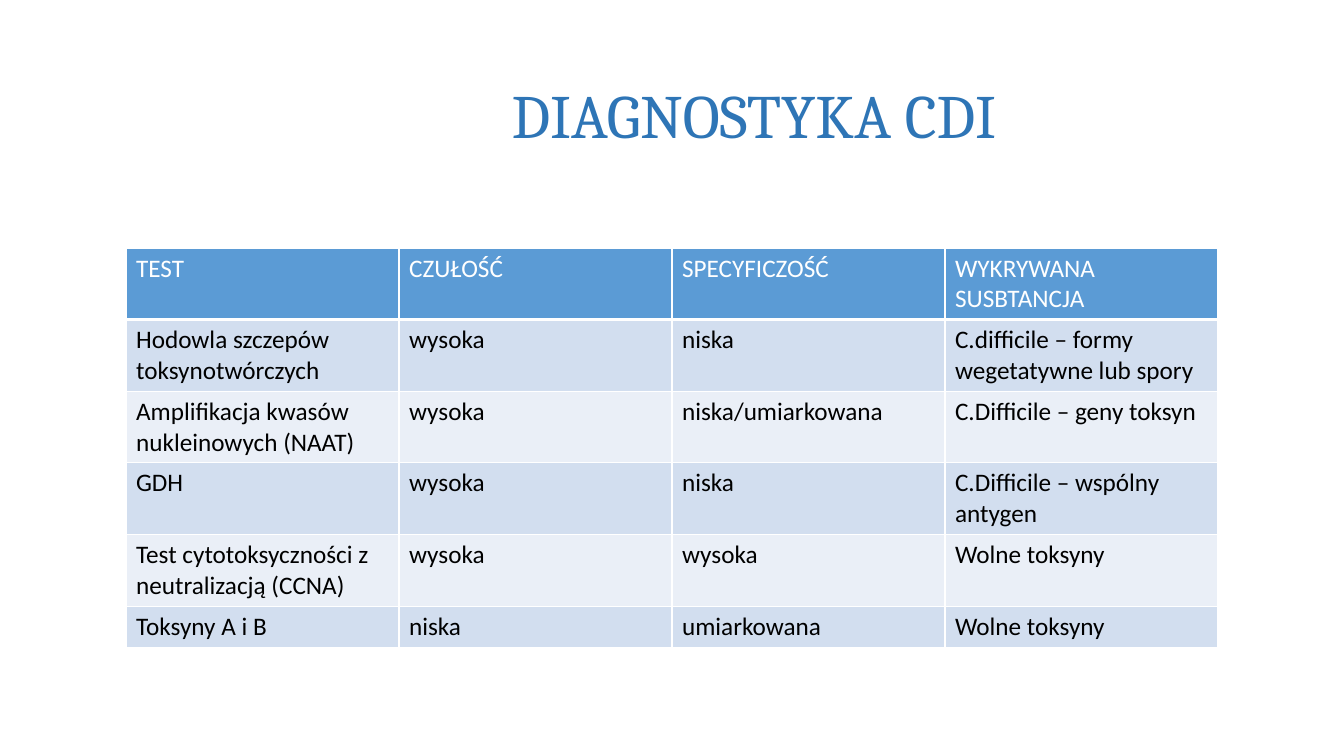
from dataclasses import dataclass

from lxml import etree
from pptx import Presentation
from pptx.dml.color import RGBColor
from pptx.enum.text import MSO_ANCHOR, PP_ALIGN
from pptx.oxml.ns import qn
from pptx.util import Inches, Pt

MIDDLE = MSO_ANCHOR.MIDDLE
CENTER = PP_ALIGN.CENTER
TITLE_ONLY = 5


@dataclass(frozen=True)
class Theme:
    title_color: str = "2E75B6"
    header_fill: str = "5B9BD5"
    header_text: str = "FFFFFF"
    body_text: str = "000000"
    border: str = "FFFFFF"
    bands: tuple = ("D2DEEF", "EAEFF7")
    title_font: str = "Cambria"
    body_font: str = "Calibri"
    title_size: int = 44
    body_size: int = 18
    border_width: int = 1
    header_rule: int = 3


THEME = Theme()
SLIDE_WIDTH, SLIDE_HEIGHT = 13.33, 7.5
TITLE_BOX = (2.54, 0.4, 9.88, 1.45)
TABLE_BOX = (1.25, 2.46, 10.83, 3.91)
ROW_HEIGHT = 0.41
TESTS = [
    ("TEST", "CZUŁOŚĆ", "SPECYFICZOŚĆ", "WYKRYWANA SUSBTANCJA"),
    ("Hodowla szczepów toksynotwórczych", "wysoka", "niska",
     "C.difficile – formy wegetatywne lub spory"),
    ("Amplifikacja kwasów nukleinowych (NAAT)", "wysoka",
     "niska/umiarkowana", "C.Difficile – geny toksyn"),
    ("GDH", "wysoka", "niska", "C.Difficile – wspólny antygen"),
    ("Test cytotoksyczności z neutralizacją (CCNA)", "wysoka", "wysoka",
     "Wolne toksyny"),
    ("Toksyny A i B", "niska", "umiarkowana", "Wolne toksyny"),
]


def write_text(frame, text, color, **formats):
    para = frame.paragraphs[0]
    span = para.add_run()
    span.text = text
    for name, value in formats.items():
        setattr(span.font, name, value)
    span.font.color.rgb = RGBColor.from_string(color)
    return para


def set_borders(cell, bottom_width):
    properties = cell._tc.get_or_add_tcPr()
    widths = dict.fromkeys(("lnL", "lnR", "lnT"), THEME.border_width)
    widths["lnB"] = bottom_width
    for position, (side, width) in enumerate(widths.items()):
        line = etree.Element(qn(f"a:{side}"), w=str(Pt(width)))
        fill = etree.SubElement(line, qn("a:solidFill"))
        etree.SubElement(fill, qn("a:srgbClr"), val=THEME.border)
        properties.insert(position, line)


def add_title(page, box, text):
    title = page.shapes.title
    for name, value in zip(("left", "top", "width", "height"), box):
        setattr(title, name, Inches(value))
    frame = title.text_frame
    frame.word_wrap = True
    frame.vertical_anchor = MIDDLE
    para = write_text(frame, text, THEME.title_color,
                      name=THEME.title_font, size=Pt(THEME.title_size))
    para.alignment = CENTER


def add_test_table(page, box, rows):
    left, top, width, height = map(Inches, box)
    graphic = page.shapes.add_table(len(rows), len(rows[0]), left, top, width, height)
    table = graphic.table
    for row in table.rows:
        row.height = Inches(ROW_HEIGHT)
    graphic.height = height
    for row_index, texts in enumerate(rows):
        header = row_index == 0
        band = THEME.bands[(row_index - 1) % len(THEME.bands)]
        for column_index, text in enumerate(texts):
            cell = table.cell(row_index, column_index)
            cell.fill.solid()
            cell.fill.fore_color.rgb = RGBColor.from_string(
                THEME.header_fill if header else band)
            set_borders(cell, THEME.header_rule if header else THEME.border_width)
            write_text(cell.text_frame, text,
                       THEME.header_text if header else THEME.body_text,
                       name=THEME.body_font, size=Pt(THEME.body_size), bold=False)


def main():
    deck = Presentation()
    deck.slide_width = Inches(SLIDE_WIDTH)
    deck.slide_height = Inches(SLIDE_HEIGHT)
    page = deck.slides.add_slide(deck.slide_layouts[TITLE_ONLY])
    add_title(page, TITLE_BOX, "DIAGNOSTYKA CDI")
    add_test_table(page, TABLE_BOX, TESTS)
    deck.save("out.pptx")


if __name__ == "__main__":
    main()
